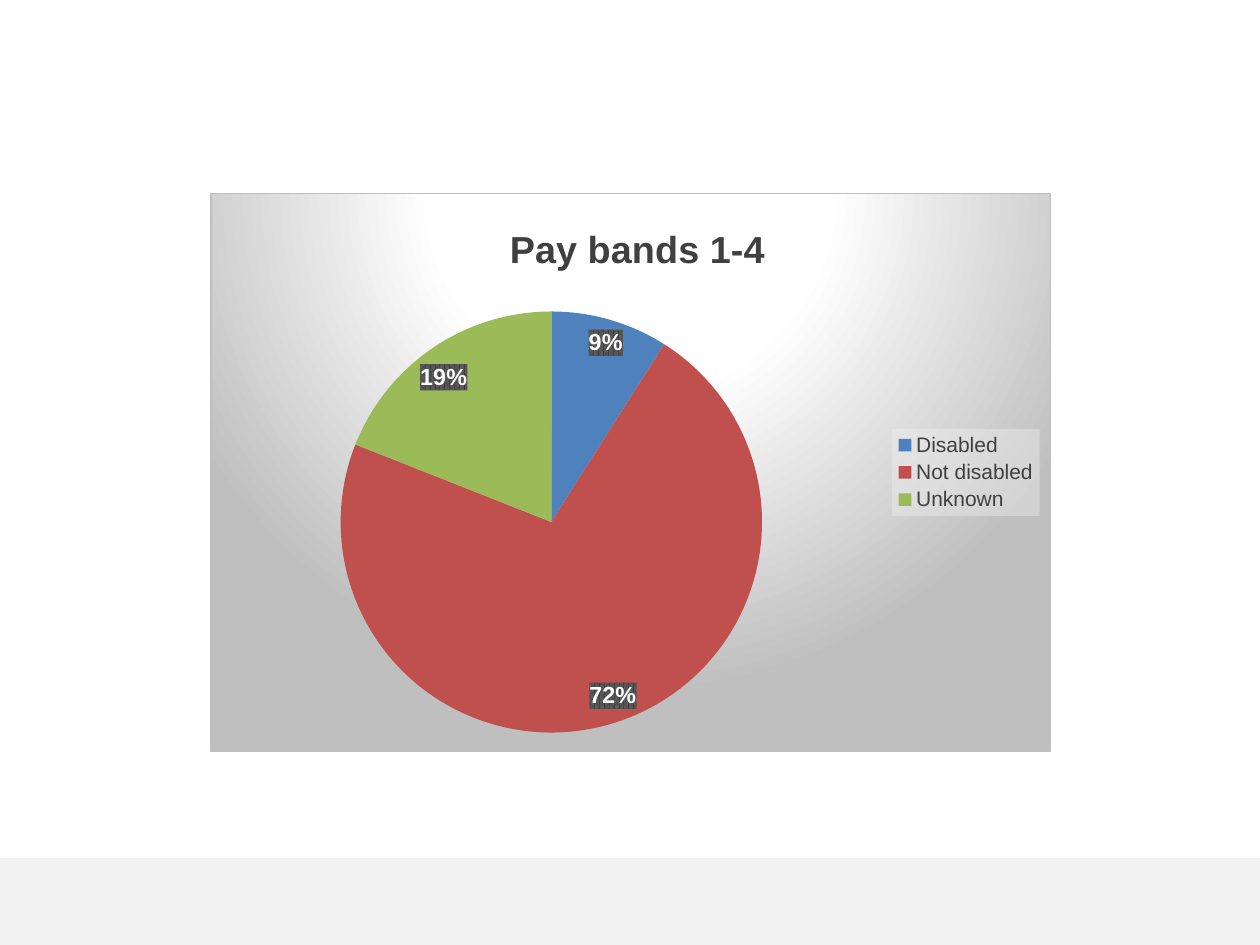
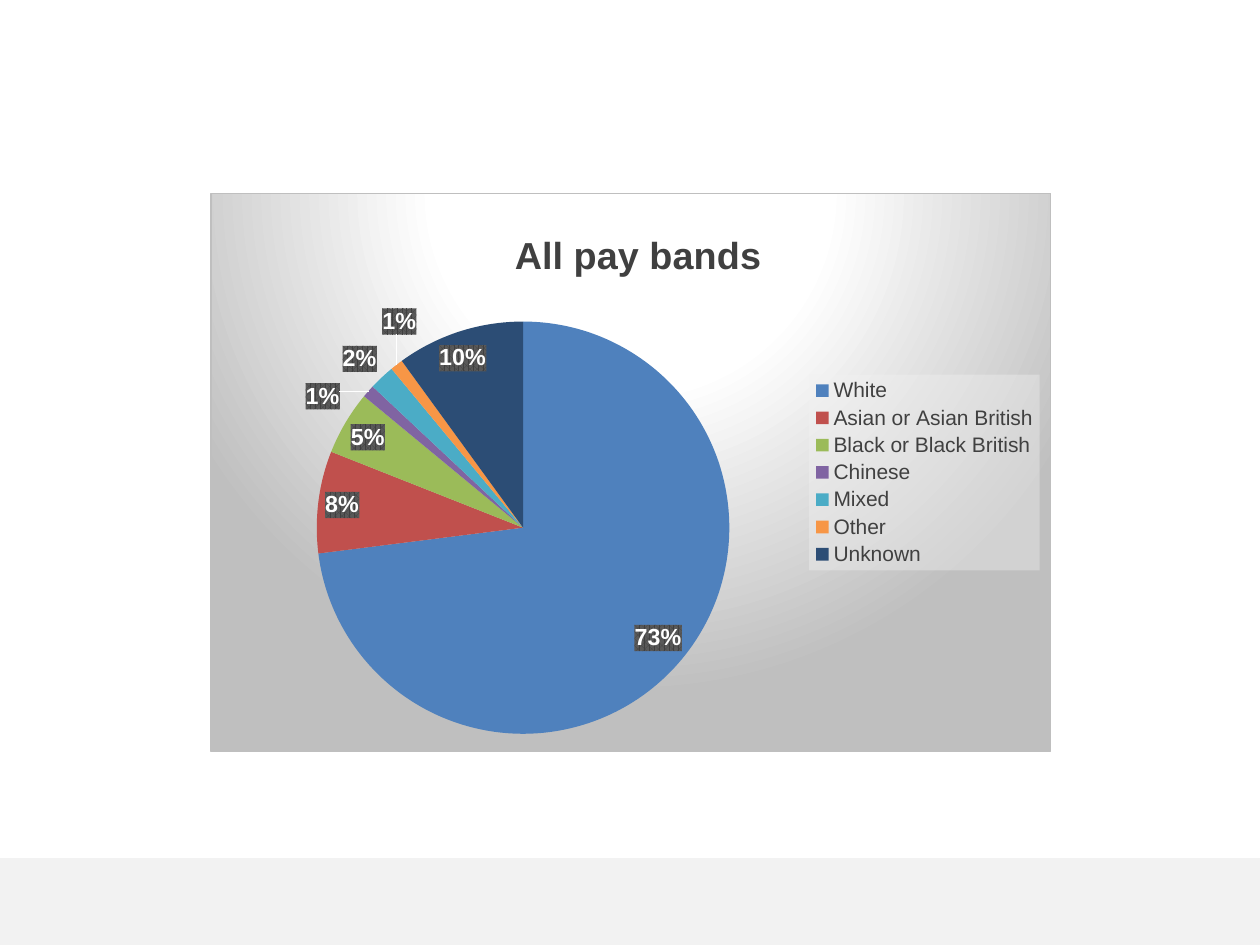
from pptx import Presentation
from pptx import util as u
from pptx.chart import data
from pptx.dml.color import RGBColor
from pptx.enum import chart as ch, shapes
from pptx.oxml import parse_xml

WHITE = RGBColor(0xFF, 0xFF, 0xFF)
BLACK = RGBColor(0, 0, 0)
PALE = RGBColor(0xF2, 0xF2, 0xF2)
GREY = RGBColor(0xBF, 0xBF, 0xBF)
SLATE = RGBColor(0x59, 0x59, 0x59)
DARK = RGBColor(0x40, 0x40, 0x40)
SLICES = [
    RGBColor(0x4F, 0x81, 0xBD), RGBColor(0xC0, 0x50, 0x4D),
    RGBColor(0x9B, 0xBB, 0x59), RGBColor(0x80, 0x64, 0xA2),
    RGBColor(0x4B, 0xAC, 0xC6), RGBColor(0xF7, 0x96, 0x46),
    RGBColor(0x2C, 0x4D, 0x75),
]
FACE = "Arial"
WIDE, HIGH = 6.67, 4.44
SPACES = ('xmlns:c="http://schemas.openxmlformats.org/drawingml/2006/chart" '
          'xmlns:a="http://schemas.openxmlformats.org/drawingml/2006/main"')


def node(tag, body):
    return parse_xml(f"<c:{tag} {SPACES}>{body}</c:{tag}>")


def tint(color, extra=""):
    return f'<a:srgbClr val="{color}">{extra}</a:srgbClr>'


def solid(color, extra=""):
    return f"<a:solidFill>{tint(color, extra)}</a:solidFill>"


def stroke(color):
    return f'<a:ln w="9525">{solid(color)}</a:ln>'


def place(parent, after, left, top, size=None, inner=False):
    """Fix the layout of a chart part, in inches from the chart's corner."""
    for old in parent.findall("{*}layout"):
        parent.remove(old)
    body = '<c:layoutTarget val="inner"/>' if inner else ""
    body += '<c:xMode val="edge"/><c:yMode val="edge"/>'
    parts = {"x": left / WIDE, "y": top / HIGH}
    if size:
        parts.update(w=size / WIDE, h=size / HIGH)
    body += "".join(f'<c:{k} val="{v:.4f}"/>' for k, v in parts.items())
    new = node("layout", f"<c:manualLayout>{body}</c:manualLayout>")
    if after is None:
        parent.insert(0, new)
    else:
        after.addnext(new)


def style(font, size, color, bold=False):
    font.name, font.size, font.bold = FACE, u.Pt(size), bold
    font.color.rgb = color


def write(frame, words, **look):
    frame.text = words
    style(frame.paragraphs[0].runs[0].font, **look)


class Deck:
    def __init__(self):
        self.prs = Presentation()
        self.prs.slide_width = u.Inches(10)
        self.prs.slide_height = u.Inches(7.5)

    def page(self):
        self.slide = self.prs.slides.add_slide(self.prs.slide_layouts[6])
        self.band()

    def band(self):
        box = self.slide.shapes.add_shape(
            shapes.MSO_SHAPE.RECTANGLE, 0, u.Inches(6.81),
            u.Inches(10), u.Inches(0.69))
        box.shadow.inherit = False
        box.fill.solid()
        box.fill.fore_color.rgb = PALE
        box.line.fill.background()

    def pie(self, title, shares, head, disc):
        """head is the title's left and top; disc the pie's left, top, size."""
        table = data.CategoryChartData()
        table.categories = list(shares)
        table.add_series("Series 1", list(shares.values()))
        chart = self.slide.shapes.add_chart(
            ch.XL_CHART_TYPE.PIE, u.Inches(1.67), u.Inches(1.53),
            u.Inches(WIDE), u.Inches(HIGH), table).chart
        style(chart.font, 10, BLACK)
        self.ground(chart)
        self.title(chart, title, head)
        self.legend(chart)
        plot = chart.plots[0]
        plot.vary_by_categories = True
        area = chart._chartSpace.find(".//{*}plotArea")
        place(area, None, *disc, inner=True)
        for i in range(len(shares)):
            part = plot.series[0].points[i].format
            part.fill.solid()
            part.fill.fore_color.rgb = SLICES[i]
            part.line.fill.background()
        self.labels(plot.series[0])

    def ground(self, chart):
        stops = "".join(f'<a:gs pos="{at * 1000}">{tint(color)}</a:gs>'
                        for at, color in ((0, WHITE), (39, WHITE), (100, GREY)))
        fill = (f'<a:gradFill><a:gsLst>{stops}</a:gsLst><a:path path="circle">'
                '<a:fillToRect l="50000" t="-80000" r="50000" b="180000"/>'
                "</a:path></a:gradFill>")
        root = chart._chartSpace
        root.find("{*}chart").addnext(node("spPr", fill + stroke(GREY)))

    def title(self, chart, words, head):
        chart.has_title = True
        name = chart.chart_title
        write(name.text_frame, words, size=21.6, color=DARK, bold=True)
        name.include_in_layout = False
        root = name._element
        place(root, root.find("{*}tx"), *head)

    def legend(self, chart):
        chart.has_legend = True
        key = chart.legend
        key.position = ch.XL_LEGEND_POSITION.RIGHT
        key.include_in_layout = False
        style(key.font, 12, DARK)
        veil = solid(PALE, '<a:alpha val="39000"/>')
        key._element.find("{*}txPr").addprevious(node("spPr", veil))

    def labels(self, series):
        tags = series.data_labels
        tags.show_percentage, tags.show_value = True, False
        tags.number_format, tags.number_format_is_linked = "0%", False
        tags.position = ch.XL_LABEL_POSITION.BEST_FIT
        style(tags.font, 13.3, WHITE, bold=True)
        root = tags._element
        weave = (f'<a:pattFill prst="pct75"><a:fgClr>{tint(DARK)}</a:fgClr>'
                 f"<a:bgClr>{tint(SLATE)}</a:bgClr></a:pattFill>")
        root.find("{*}txPr").addprevious(node("spPr", weave))
        for old in root.findall("{*}showLeaderLines"):
            root.remove(old)
        root.append(parse_xml(f'<c:showLeaderLines {SPACES} val="1"/>'))
        root.append(node("leaderLines", f"<c:spPr>{stroke(WHITE)}</c:spPr>"))


def main():
    deck = Deck()
    deck.page()
    deck.pie("Pay bands 1-4",
             {"Disabled": 9, "Not disabled": 72, "Unknown": 19},
             head=(2.32, 0.2), disc=(1.03, 0.94, 3.35))
    deck.page()
    deck.pie("All pay bands",
             {"White": 73, "Asian or Asian British": 8,
              "Black or Black British": 5, "Chinese": 1, "Mixed": 2,
              "Other": 1, "Unknown": 10},
             head=(2.36, 0.24), disc=(0.84, 1.02, 3.28))
    deck.prs.save("out.pptx")


if __name__ == "__main__":
    main()
